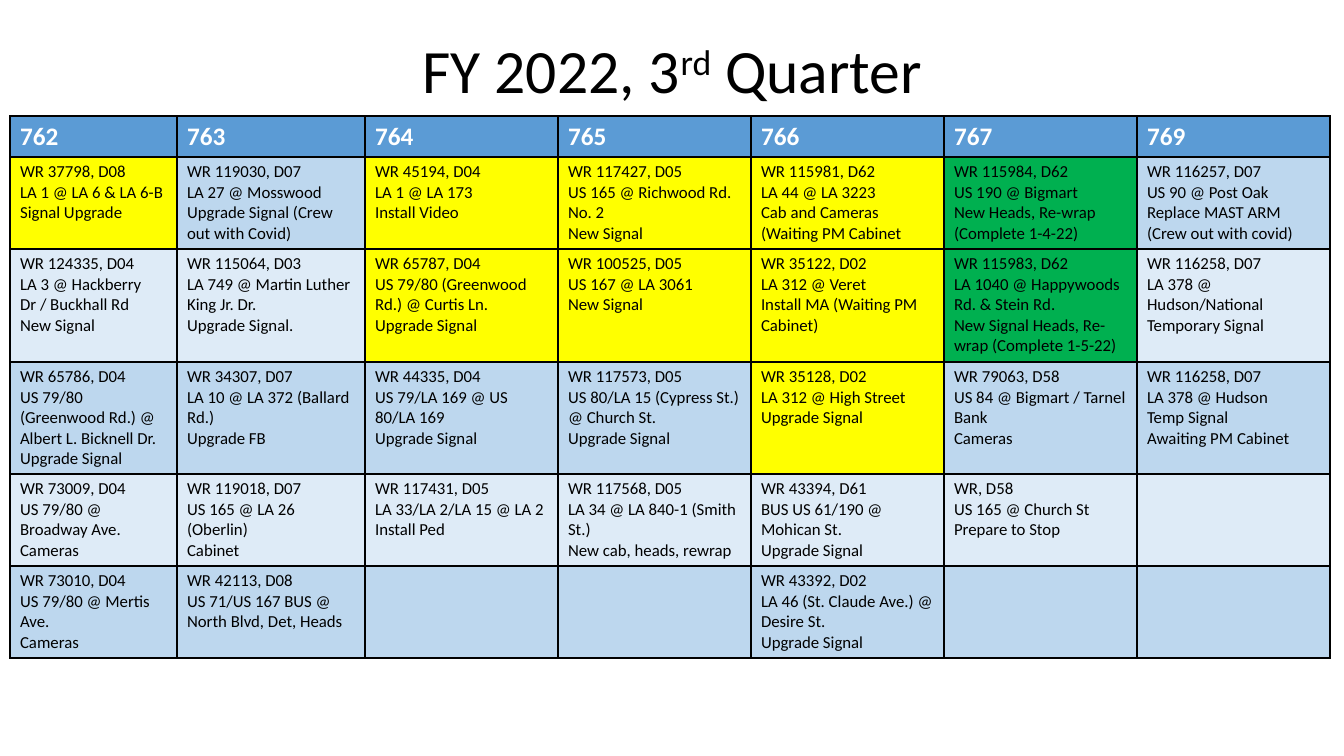
from lxml import etree
from pptx import Presentation
from pptx.dml.color import RGBColor
from pptx.enum.text import MSO_ANCHOR, PP_ALIGN
from pptx.oxml.ns import qn
from pptx.util import Emu, Pt

MIDDLE, CENTER = MSO_ANCHOR.MIDDLE, PP_ALIGN.CENTER
EMU_PER_PX = 914400 / 100.8
THEME = {
    "font": "Calibri", "text": "000000", "border": "000000",
    "header": "5B9BD5", "header_text": "FFFFFF",
    "bands": ("BDD7EE", "DEEBF7"),
    "waiting": "FFFF00", "complete": "00B050",
    "title_size": 44, "header_size": 18, "body_size": 12, "border_width": 1,
}

SLIDE_SIZE = (1344, 756)
TITLE_BOX = (93, 1, 1159, 146)
SCHEDULE_BOX = (10, 116, 1320, 542)
COLUMN_WIDTHS = (167, 188) + (193,) * 5
ROW_HEIGHTS = (41, 92, 113, 112, 92, 92)

TITLE = (("FY 2022, 3", False), ("rd", True), (" Quarter", False))
CREWS = ("762", "763", "764", "765", "766", "767", "769")
# "|" breaks a line, "||" starts a paragraph
JOBS = (
    ("WR 37798, D08|LA 1 @ LA 6 & LA 6-B Signal Upgrade",
     "WR 119030, D07|LA 27 @ Mosswood|Upgrade Signal (Crew out with Covid)",
     "WR 45194, D04||LA 1 @ LA 173|Install Video",
     "WR 117427, D05|US 165 @ Richwood Rd. No. 2|New Signal",
     "WR 115981, D62||LA 44 @ LA 3223|Cab and Cameras (Waiting PM Cabinet",
     "WR 115984, D62|US 190 @ Bigmart||New Heads, Re-wrap (Complete 1-4-22)",
     "WR 116257, D07|US 90 @ Post Oak|Replace MAST ARM (Crew out with covid)"),
    ("WR 124335, D04|LA 3 @ Hackberry Dr / Buckhall Rd|New Signal",
     "WR 115064, D03|LA 749 @ Martin Luther King Jr. Dr.|Upgrade Signal.",
     "WR 65787, D04|US 79/80 (Greenwood Rd.) @ Curtis Ln.|Upgrade Signal",
     "WR 100525, D05|US 167 @ LA 3061|New Signal",
     "WR 35122, D02|LA 312 @ Veret||Install MA (Waiting PM Cabinet)",
     "WR 115983, D62|LA 1040 @ Happywoods Rd. & Stein Rd.|"
     "New Signal Heads, Re-wrap (Complete 1-5-22)",
     "WR 116258, D07|LA 378 @ Hudson/National||Temporary Signal"),
    ("WR 65786, D04|US 79/80 (Greenwood Rd.) @ Albert L. Bicknell Dr.|Upgrade Signal",
     "WR 34307, D07|LA 10 @ LA 372 (Ballard Rd.)|Upgrade FB",
     "WR 44335, D04|US 79/LA 169 @ US 80/LA 169|Upgrade Signal",
     "WR 117573, D05|US 80/LA 15 (Cypress St.) @ Church St.|Upgrade Signal",
     "WR 35128, D02|LA 312 @ High Street|Upgrade Signal",
     "WR 79063, D58|US 84 @ Bigmart / Tarnel Bank|Cameras",
     "WR 116258, D07||LA 378 @ Hudson||Temp Signal|Awaiting PM Cabinet"),
    ("WR 73009, D04|US 79/80 @ Broadway Ave.|Cameras",
     "WR 119018, D07|US 165 @ LA 26 (Oberlin)|Cabinet",
     "WR 117431, D05|LA 33/LA 2/LA 15 @ LA 2|Install Ped",
     "WR 117568, D05|LA 34 @ LA 840-1 (Smith St.)|New cab, heads, rewrap",
     "WR 43394, D61|BUS US 61/190 @ Mohican St.|Upgrade Signal",
     "WR, D58|US 165 @ Church St|Prepare to Stop",
     ""),
    ("WR 73010, D04|US 79/80 @ Mertis Ave.|Cameras",
     "WR 42113, D08|US 71/US 167 BUS @ North Blvd, Det, Heads",
     "", "",
     "WR 43392, D02|LA 46 (St. Claude Ave.) @ Desire St.|Upgrade Signal",
     "", ""),
)
# (job row, crew column) of the jobs that stand out from the bands
STATUS_CELLS = {
    "waiting": ((0, 0), (0, 2), (0, 3), (0, 4), (1, 2), (1, 3), (1, 4), (2, 4)),
    "complete": ((0, 5), (1, 5)),
}
STATUS = {place: status for status, places in STATUS_CELLS.items() for place in places}


def px(length):
    return Emu(round(length * EMU_PER_PX))


def style_font(font, size, color, bold=False):
    settings = {"name": THEME["font"], "size": Pt(size), "bold": bold}
    for attribute, value in settings.items():
        setattr(font, attribute, value)
    font.color.rgb = RGBColor.from_string(color)


def add_title(slide, box):
    frame = slide.shapes.add_textbox(*map(px, box)).text_frame
    frame.word_wrap = True
    frame.vertical_anchor = MIDDLE
    heading = frame.paragraphs[0]
    heading.alignment = CENTER
    heading.line_spacing = 0.9
    for text, raised in TITLE:
        run = heading.add_run()
        run.text = text
        style_font(run.font, THEME["title_size"], THEME["text"])
        if raised:
            run._r.get_or_add_rPr().set("baseline", "30000")


def add_borders(cell):
    properties = cell._tc.get_or_add_tcPr()
    for side in ("lnL", "lnR", "lnT", "lnB"):
        line = etree.SubElement(properties, qn(f"a:{side}"), w=str(Pt(THEME["border_width"])))
        fill = etree.SubElement(line, qn("a:solidFill"))
        etree.SubElement(fill, qn("a:srgbClr"), val=THEME["border"])


def fill_cell(cell, text, fill, size, color, bold=False):
    add_borders(cell)
    cell.fill.solid()
    cell.fill.fore_color.rgb = RGBColor.from_string(fill)
    frame = cell.text_frame
    for index, part in enumerate(text.split("||")):
        paragraph = frame.add_paragraph() if index else frame.paragraphs[0]
        paragraph.text = part.replace("|", "\v")
        for run in paragraph.runs:
            style_font(run.font, size, color, bold)


def add_schedule(slide, box):
    table = slide.shapes.add_table(len(JOBS) + 1, len(CREWS), *map(px, box)).table
    table.horz_banding = False
    for column, width in zip(table.columns, COLUMN_WIDTHS):
        column.width = px(width)
    for row, height in zip(table.rows, ROW_HEIGHTS):
        row.height = px(height)
    for column, crew in enumerate(CREWS):
        fill_cell(table.cell(0, column), crew, THEME["header"],
                  THEME["header_size"], THEME["header_text"], bold=True)
    for row, jobs in enumerate(JOBS):
        for column, job in enumerate(jobs):
            status = STATUS.get((row, column))
            fill = THEME[status] if status else THEME["bands"][row % 2]
            fill_cell(table.cell(row + 1, column), job, fill,
                      THEME["body_size"], THEME["text"])


def main():
    deck = Presentation()
    deck.slide_width, deck.slide_height = map(px, SLIDE_SIZE)
    slide = deck.slides.add_slide(deck.slide_layouts[6])
    add_title(slide, TITLE_BOX)
    add_schedule(slide, SCHEDULE_BOX)
    deck.save("out.pptx")


if __name__ == "__main__":
    main()
